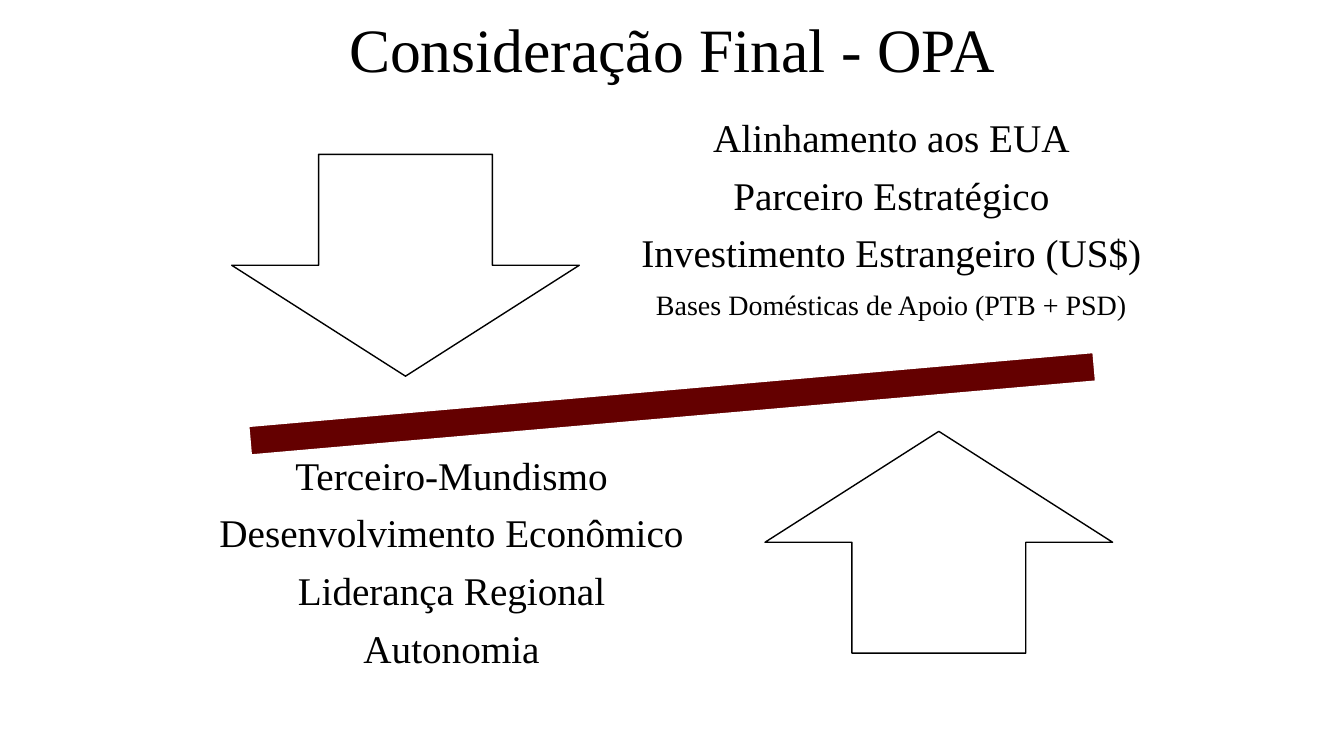
from dataclasses import dataclass

import pptx
import pptx.dml.color
import pptx.enum.shapes
import pptx.enum.text
import pptx.util

Cm = pptx.util.Cm
Pt = pptx.util.Pt
MSO_SHAPE = pptx.enum.shapes.MSO_SHAPE
FONT = "Times New Roman"
BLACK, WHITE, MAROON = "000000", "FFFFFF", "640000"


@dataclass
class Figure:
    kind: int
    left: float
    top: float
    width: float
    height: float
    fill: str
    line: str
    rotation: float = 0


@dataclass
class TextBlock:
    left: float
    top: float
    width: float
    height: float
    lines: list[tuple[str, int]]
    side_inset: float = 0.56
    top_inset: float = 0.56
    bottom_inset: float = 0.56
    space_after: float = 11


TITLE = TextBlock(2.34, 0.23, 29.21, 2.21, [("Consideração Final - OPA", 44)],
                  0.25, 0.13, 0.13, 0)
ALIGNMENT = TextBlock(14.91, 3.18, 15.11, 5.87, [
    ("Alinhamento aos EUA", 28),
    ("Parceiro Estratégico", 28),
    ("Investimento Estrangeiro (US$)", 28),
    ("Bases Domésticas de Apoio (PTB + PSD)", 20),
], top_inset=0, bottom_inset=1.13)
AUTONOMY = TextBlock(4.37, 11.28, 14.02, 5.87, [
    ("Terceiro-Mundismo", 28),
    ("Desenvolvimento Econômico", 28),
    ("Liderança Regional", 28),
    ("Autonomia", 28),
])
BEAM = Figure(MSO_SHAPE.MATH_MINUS, 2.41, 8.64, 29.06, 3.07, MAROON, WHITE, 355)
DOWN = Figure(MSO_SHAPE.DOWN_ARROW, 5.84, 3.89, 8.76, 5.59, WHITE, BLACK)
UP = Figure(MSO_SHAPE.UP_ARROW, 19.28, 10.87, 8.76, 5.59, WHITE, BLACK)


def color(value: str) -> pptx.dml.color.RGBColor:
    return pptx.dml.color.RGBColor.from_string(value)


def draw_figure(s: pptx.slide.Slide, f: Figure) -> None:
    sp = s.shapes.add_shape(f.kind, Cm(f.left), Cm(f.top), Cm(f.width), Cm(f.height))
    sp.shadow.inherit = False
    sp.rotation = f.rotation
    sp.fill.solid()
    sp.fill.fore_color.rgb = color(f.fill)
    sp.line.color.rgb = color(f.line)
    sp.line.width = Pt(1)


def draw_text(s: pptx.slide.Slide, b: TextBlock) -> None:
    sp = s.shapes.add_textbox(Cm(b.left), Cm(b.top), Cm(b.width), Cm(b.height))
    tf = sp.text_frame
    tf.word_wrap = True
    tf.vertical_anchor = pptx.enum.text.MSO_ANCHOR.MIDDLE
    tf.margin_left = tf.margin_right = Cm(b.side_inset)
    tf.margin_top = Cm(b.top_inset)
    tf.margin_bottom = Cm(b.bottom_inset)
    tf.text = "\n".join(text for text, _ in b.lines)
    for p, (_, size) in zip(tf.paragraphs, b.lines):
        p.alignment = pptx.enum.text.PP_ALIGN.CENTER
        p.line_spacing = 0.9
        p.space_after = Pt(b.space_after)
        for r in p.runs:
            r.font.name = FONT
            r.font.size = Pt(size)
            r.font.color.rgb = color(BLACK)


def main() -> None:
    prs = pptx.Presentation()
    prs.slide_width, prs.slide_height = Cm(33.87), Cm(19.05)
    s = prs.slides.add_slide(prs.slide_layouts[6])
    draw_text(s, TITLE)
    draw_figure(s, BEAM)
    for arrow, block in ((DOWN, ALIGNMENT), (UP, AUTONOMY)):
        draw_figure(s, arrow)
        draw_text(s, block)
    prs.save("out.pptx")


if __name__ == "__main__":
    main()
